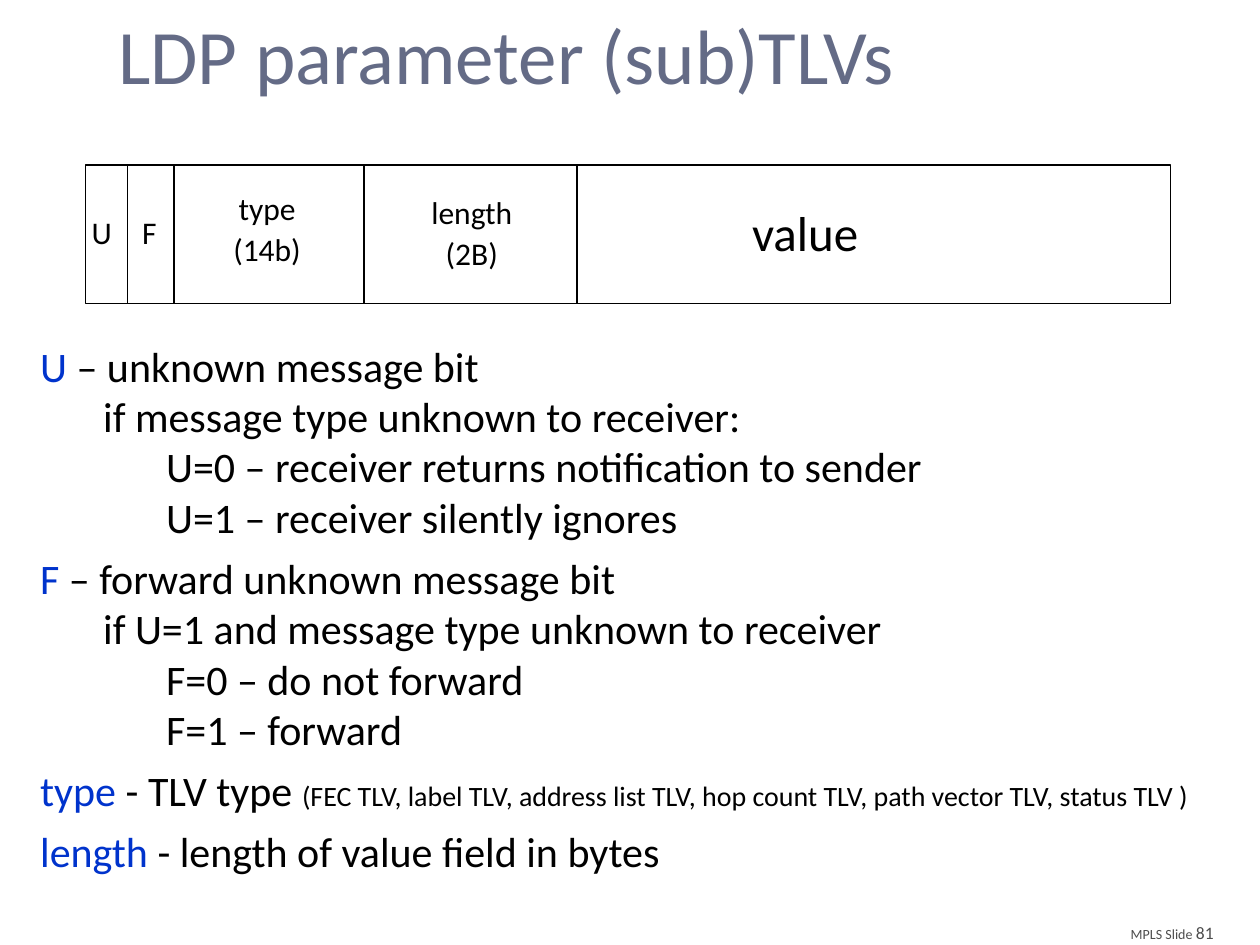
from dataclasses import dataclass

from lxml import etree
from pptx import Presentation
from pptx.dml.color import RGBColor
from pptx.enum.shapes import MSO_CONNECTOR, MSO_SHAPE
from pptx.enum.text import MSO_ANCHOR, MSO_AUTO_SIZE, PP_ALIGN
from pptx.oxml.ns import qn
from pptx.slide import Slide
from pptx.text.text import TextFrame, _Paragraph
from pptx.util import Inches, Pt

LEFT, CENTER, RIGHT = PP_ALIGN.LEFT, PP_ALIGN.CENTER, PP_ALIGN.RIGHT
TOP = MSO_ANCHOR.TOP
NO_AUTO_SIZE = MSO_AUTO_SIZE.NONE
RECTANGLE = MSO_SHAPE.RECTANGLE
STRAIGHT = MSO_CONNECTOR.STRAIGHT

BLACK = RGBColor(0x00, 0x00, 0x00)
BLUE = RGBColor(0x00, 0x33, 0xCC)
SLATE = RGBColor(0x64, 0x6B, 0x86)
GRAY = RGBColor(0x4D, 0x4D, 0x4D)
FONT = "Calibri"
LINE_WIDTH = Pt(0.75)
BODY_SIZE = 24
LEVEL_INDENT = 0.5

# Packet diagram frame, in inches
FRAME_LEFT, FRAME_TOP, FRAME_WIDTH, FRAME_HEIGHT = 0.68, 1.31, 8.61, 1.1
DIVIDERS = (1.01, 1.38, 2.89, 4.58)


@dataclass
class Run:
    text: str
    color: RGBColor = BLACK
    size: float = BODY_SIZE


@dataclass
class Line:
    runs: list[Run]
    level: int = 0
    space_before: float = 0


@dataclass
class FieldLabel:
    left: float
    top: float
    width: float
    height: float
    lines: list[str]
    size: float = 18
    alignment: PP_ALIGN = CENTER


LABELS = [
    FieldLabel(0.63, 1.64, 0.33, 0.43, ["U"], alignment=LEFT),
    FieldLabel(1.03, 1.64, 0.33, 0.43, ["F"], alignment=LEFT),
    FieldLabel(1.57, 1.45, 1.1, 0.8, ["type", "(14b)"]),
    FieldLabel(3.26, 1.48, 0.97, 0.8, ["length", "(2B)"]),
    FieldLabel(5.6, 1.56, 1.58, 0.57, ["value"], size=28),
]

EXPLANATION = [
    Line([Run("U", BLUE), Run(" – unknown message bit")]),
    Line([Run("if message type unknown to receiver:")], 1),
    Line([Run("U=0 – receiver returns notification to sender")], 2),
    Line([Run("U=1 – receiver silently ignores")], 2),
    Line([Run("F ", BLUE), Run("– forward unknown message bit")], space_before=6),
    Line([Run("if U=1 and message type unknown to receiver")], 1),
    Line([Run("F=0 – do not forward")], 2),
    Line([Run("F=1 – forward")], 2),
    Line([
        Run("type ", BLUE),
        Run("- TLV type "),
        Run("(FEC TLV, label TLV, address list TLV, hop count TLV, "
            "path vector TLV, status TLV )", size=16),
    ], space_before=6),
    Line([Run("length", BLUE), Run(" - length of value field in bytes")], space_before=6),
]


def add_run(paragraph: _Paragraph, content: Run) -> None:
    run = paragraph.add_run()
    run.text = content.text
    run.font.name = FONT
    run.font.size = Pt(content.size)
    run.font.color.rgb = content.color


def write_lines(text_frame: TextFrame, lines: list[Line], alignment: PP_ALIGN) -> None:
    for index, line in enumerate(lines):
        paragraph = text_frame.paragraphs[0] if index == 0 else text_frame.add_paragraph()
        paragraph.alignment = alignment
        paragraph.space_before = Pt(line.space_before)
        if line.level:
            properties = paragraph._p.get_or_add_pPr()
            properties.set("marL", str(Inches(line.level * LEVEL_INDENT)))
        for run in line.runs:
            add_run(paragraph, run)


def add_text(slide: Slide, left: float, top: float, width: float, height: float,
             lines: list[Line], alignment: PP_ALIGN = LEFT, wrap: bool = True) -> None:
    box = slide.shapes.add_textbox(Inches(left), Inches(top), Inches(width), Inches(height))
    box.text_frame.word_wrap = wrap
    write_lines(box.text_frame, lines, alignment)


def add_title(slide: Slide, text: str) -> None:
    title = slide.shapes.title
    title.left, title.top = Inches(0.39), Inches(0.01)
    title.width, title.height = Inches(7.26), Inches(1.09)
    title.text_frame.vertical_anchor = TOP
    title.text_frame.auto_size = NO_AUTO_SIZE
    write_lines(title.text_frame, [Line([Run(text, SLATE, 44)])], CENTER)


def add_frame(slide: Slide) -> None:
    frame = slide.shapes.add_shape(
        RECTANGLE, Inches(FRAME_LEFT), Inches(FRAME_TOP),
        Inches(FRAME_WIDTH), Inches(FRAME_HEIGHT))
    frame.shadow.inherit = False
    frame.fill.background()
    frame.line.color.rgb = BLACK
    frame.line.width = LINE_WIDTH


def add_divider(slide: Slide, x: float) -> None:
    divider = slide.shapes.add_connector(
        STRAIGHT, Inches(x), Inches(FRAME_TOP), Inches(x), Inches(FRAME_TOP + FRAME_HEIGHT))
    divider.line.color.rgb = BLACK
    divider.line.width = LINE_WIDTH
    etree.SubElement(divider._element.spPr, qn("a:effectLst"))


def add_label(slide: Slide, label: FieldLabel) -> None:
    lines = [Line([Run(text, size=label.size)], space_before=index * label.size / 10)
             for index, text in enumerate(label.lines)]
    add_text(slide, label.left, label.top, label.width, label.height, lines, label.alignment)


def main() -> None:
    presentation = Presentation()
    presentation.slide_width, presentation.slide_height = Inches(10), Inches(7.5)
    slide = presentation.slides.add_slide(presentation.slide_layouts[5])

    add_title(slide, "LDP parameter (sub)TLVs")

    # Packet layout
    add_frame(slide)
    for x in DIVIDERS:
        add_divider(slide, x)
    for label in LABELS:
        add_label(slide, label)

    # Field explanations
    add_text(slide, 0.22, 2.65, 9.61, 4.48, EXPLANATION)

    # Slide number
    footer = Line([Run("MPLS Slide ", GRAY, 8), Run("81", GRAY, 10)])
    add_text(slide, 8.84, 7.27, 0.89, 0.27, [footer], RIGHT, wrap=False)

    presentation.save("out.pptx")


if __name__ == "__main__":
    main()
